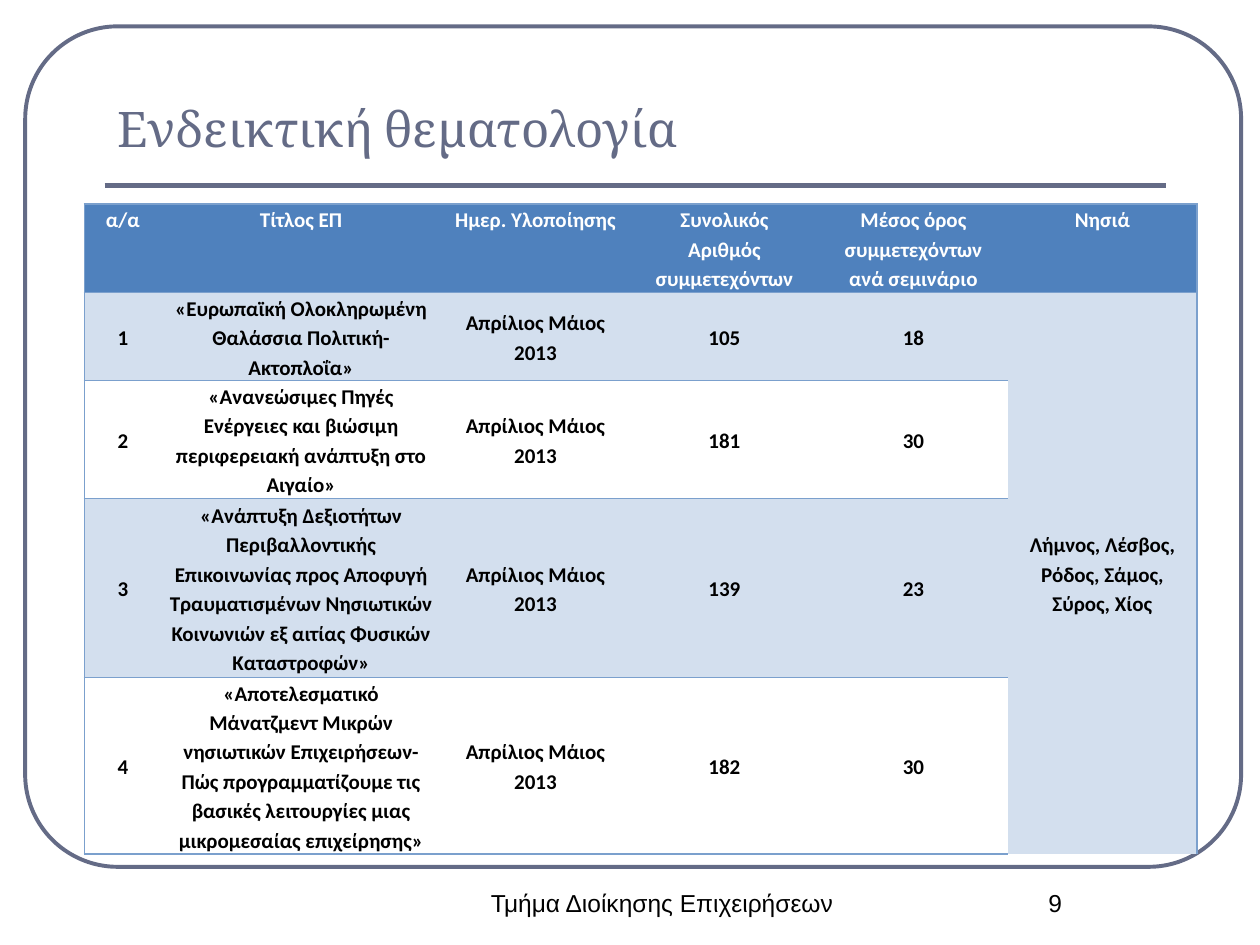
from lxml.etree import SubElement
from pptx import Presentation
from pptx.dml.color import RGBColor
from pptx.enum.shapes import MSO_CONNECTOR, MSO_SHAPE
from pptx.enum.text import MSO_ANCHOR, PP_ALIGN
from pptx.oxml.ns import qn
from pptx.util import Inches, Pt

SLATE, EDGE = "646B86", "7BA0CD"
HEAD, BAND, WHITE, BLACK = "4F81BD", "D3DFEE", "FFFFFF", "000000"
COLS = [0.61, 2.22, 1.5, 1.5, 1.5, 1.5]
ROWS = [0.69, 0.69, 0.92, 1.42, 1.38]
DATE = "Απρίλιος Μάιος 2013"
DATA = [
    ["α/α", "Τίτλος ΕΠ", "Ημερ. Υλοποίησης", "Συνολικός\nΑριθμός συμμετεχόντων",
     "Μέσος όρος\nσυμμετεχόντων ανά σεμινάριο", "Νησιά"],
    ["1", "«Ευρωπαϊκή Ολοκληρωμένη Θαλάσσια Πολιτική-Ακτοπλοΐα»",
     DATE, "105", "18", "Λήμνος, Λέσβος, Ρόδος, Σάμος, Σύρος, Χίος"],
    ["2", "«Ανανεώσιμες Πηγές Ενέργειες και βιώσιμη περιφερειακή ανάπτυξη "
     "στο Αιγαίο»", DATE, "181", "30", ""],
    ["3", "«Ανάπτυξη Δεξιοτήτων Περιβαλλοντικής Επικοινωνίας προς Αποφυγή "
     "Τραυματισμένων Νησιωτικών Κοινωνιών εξ αιτίας Φυσικών Καταστροφών»",
     DATE, "139", "23", ""],
    ["4", "«Αποτελεσματικό Μάνατζμεντ Μικρών νησιωτικών Επιχειρήσεων- Πώς "
     "προγραμματίζουμε τις βασικές λειτουργίες μιας μικρομεσαίας επιχείρησης»",
     DATE, "182", "30", ""],
]


def rgb(code):
    return RGBColor.from_string(code)


def write(frame, text, size=14, font="Arial", color=BLACK, bold=False,
          align=PP_ALIGN.CENTER, space=1.0):
    frame.word_wrap = True
    frame.text = text
    for para in frame.paragraphs:
        para.alignment, para.line_spacing = align, space
        for run in para.runs:
            run.font.size, run.font.name = Pt(size), font
            run.font.bold = bold
            run.font.color.rgb = rgb(color)


def add_frame(slide, x, y, w, h):
    # Rounded border
    box = slide.shapes.add_shape(MSO_SHAPE.ROUNDED_RECTANGLE, Inches(x),
                                 Inches(y), Inches(w), Inches(h))
    box.adjustments[0] = 0.11
    box.shadow.inherit = False
    box.fill.background()
    box.line.color.rgb = rgb(SLATE)
    box.line.width = Pt(2.25)


def add_title(slide, x, y, w, h, text):
    title = slide.shapes.title
    title.left, title.top = Inches(x), Inches(y)
    title.width, title.height = Inches(w), Inches(h)
    title.text_frame.vertical_anchor = MSO_ANCHOR.BOTTOM
    write(title.text_frame, text, size=28, font="Cambria", color=SLATE,
          align=PP_ALIGN.LEFT)
    # Rule under the title
    low = Inches(y + h + 0.17)
    rule = slide.shapes.add_connector(MSO_CONNECTOR.STRAIGHT, Inches(x), low,
                                      Inches(x + w), low)
    rule.line.color.rgb = rgb(SLATE)
    rule.line.width = Pt(3)
    SubElement(rule._element.spPr, qn("a:effectLst"))


def set_edges(cell, sides):
    props = cell._tc.get_or_add_tcPr()
    for side in "LRTB":
        line = SubElement(props, qn(f"a:ln{side}"), w=str(Pt(1)))
        if side in sides:
            fill = SubElement(line, qn("a:solidFill"))
            SubElement(fill, qn("a:srgbClr"), val=EDGE)
        else:
            SubElement(line, qn("a:noFill"))


def add_grid(slide, x, y, w, h):
    last_row, last_col = len(ROWS) - 1, len(COLS) - 1
    grid = slide.shapes.add_table(len(ROWS), len(COLS), Inches(x), Inches(y),
                                  Inches(w), Inches(h)).table
    grid.first_row = grid.horz_banding = False
    for col, width in zip(grid.columns, COLS):
        col.width = Inches(width)
    for row, height in zip(grid.rows, ROWS):
        row.height = Inches(height)
    for r, texts in enumerate(DATA):
        for c, text in enumerate(texts):
            cell = grid.cell(r, c)
            # Borders: outer edges and row rules, none inside the merged cell
            sides = "L" if c == 0 else "R" if c == last_col else ""
            if c < last_col or r < 2:
                sides += "T"
            if c < last_col or r in (0, last_row):
                sides += "B"
            set_edges(cell, sides)
            # Fill, margins and text
            cell.fill.solid()
            shade = HEAD if r == 0 else BAND if r % 2 or c == last_col else WHITE
            cell.fill.fore_color.rgb = rgb(shade)
            side = 0.07 if r == last_row else 0.05
            cell.margin_left = cell.margin_right = Inches(side)
            cell.margin_top = cell.margin_bottom = 0
            cell.vertical_anchor = MSO_ANCHOR.MIDDLE if r else MSO_ANCHOR.TOP
            write(cell.text_frame, text, size=12, font="Calibri", bold=True,
                  color=BLACK if r else WHITE, space=1.15)
    grid.cell(1, last_col).merge(grid.cell(last_row, last_col))


def add_note(slide, x, y, w, h, text):
    box = slide.shapes.add_textbox(Inches(x), Inches(y), Inches(w), Inches(h))
    write(box.text_frame, text)


def main():
    deck = Presentation()
    deck.slide_width, deck.slide_height = Inches(10), Inches(7.5)
    slide = deck.slides.add_slide(deck.slide_layouts[5])
    add_frame(slide, 0.2, 0.21, 9.65, 6.67)
    add_title(slide, 0.83, 0.36, 8.42, 0.94, "Ενδεικτική θεματολογία")
    add_grid(slide, 0.67, 1.62, sum(COLS), sum(ROWS))
    # Footer and page number
    add_note(slide, 3.67, 7, 3.17, 0.5, "Τμήμα Διοίκησης Επιχειρήσεων")
    add_note(slide, 7.5, 7, 1.75, 0.5, "9")
    deck.save("out.pptx")


if __name__ == "__main__":
    main()
